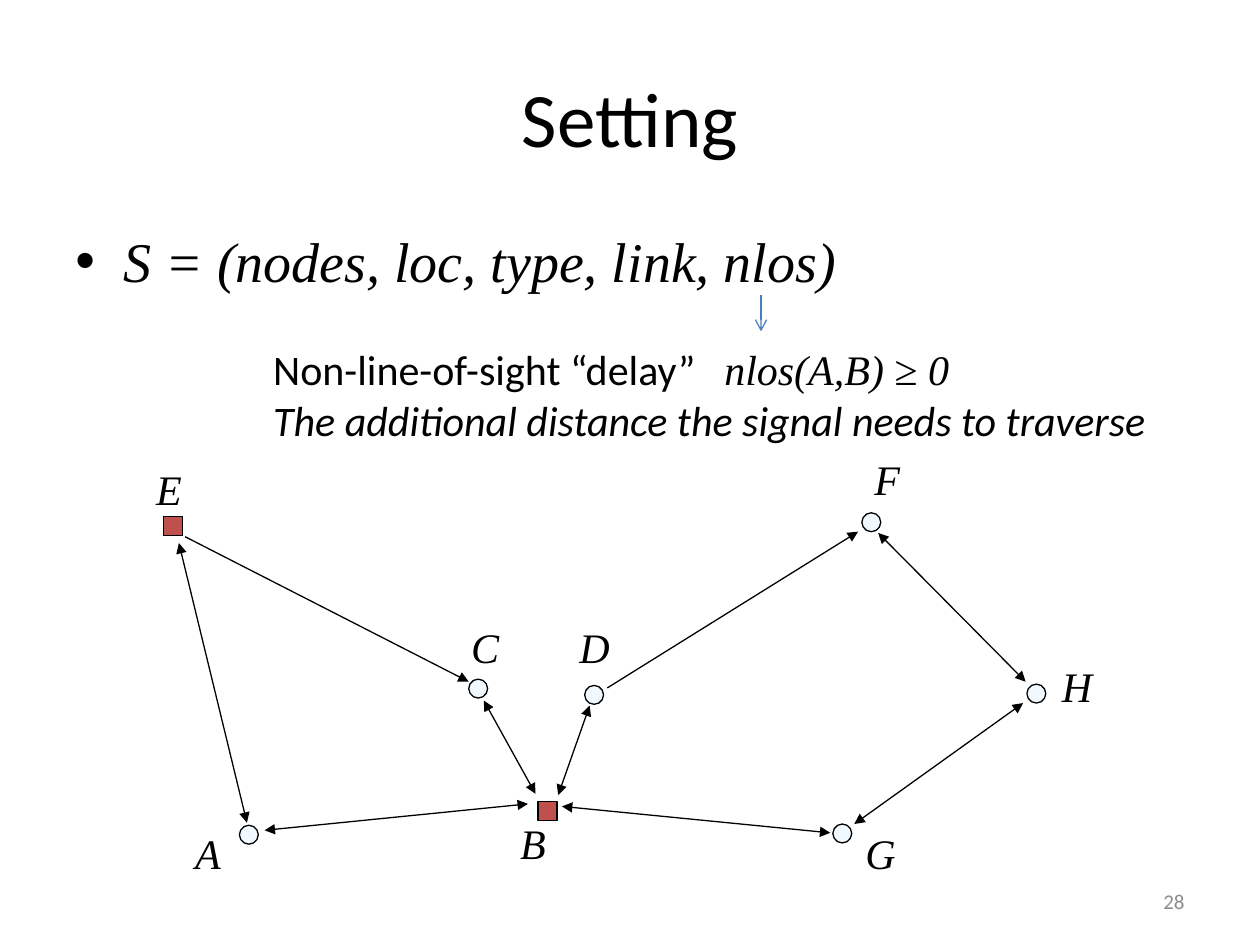
from collections import namedtuple

from lxml import etree
from pptx import Presentation
from pptx import util as u
from pptx.dml.color import RGBColor
from pptx.enum import shapes, text
from pptx.oxml.ns import qn

PX = 9144  # EMU per px, 100 px to the inch
COLORS = {
    "ink": "000000",
    "paper": "FFFFFF",
    "muted": "8C8C8C",
    "anchor": "C0504D",
    "node": "EFF9FF",
    "pointer": "4B7EBC",
}
SERIF = "Times New Roman"
NODE_SIZE = 15
Box = namedtuple("Box", "left top width height")

# name: (node left, node top, label left, label top, is an anchor)
NODES = {
    "A": (90, 305, 45, 302, False),
    "B": (327, 286, 303, 294, True),
    "C": (272, 189, 264, 138, False),
    "D": (364, 194, 350, 138, False),
    "E": (30, 60, 14, 13, True),
    "F": (584, 57, 584, 5, False),
    "G": (561, 304, 577, 302, False),
    "H": (715, 193, 733, 169, False),
}
# (from x, from y, to x, to y, points both ways)
LINKS = [
    (47, 76, 272, 191, False),
    (343, 281, 368, 210, True),
    (325, 280, 284, 206, True),
    (110, 309, 319, 288, True),
    (346, 290, 559, 311, True),
    (382, 196, 581, 72, False),
    (96, 303, 42, 81, True),
    (714, 191, 597, 73, True),
    (578, 304, 712, 208, True),
]


def px(*lengths):
    return [u.Emu(length * PX) for length in lengths]


def rgb(name):
    return RGBColor.from_string(COLORS[name])


def add_span(para, words, size=24, font="Calibri", color="ink", italic=False):
    span = para.add_run()
    span.text = words
    span.font.size = u.Pt(size)
    span.font.name = font
    span.font.italic = italic
    span.font.color.rgb = rgb(color)


def add_text(page, box, words="", align=text.PP_ALIGN.LEFT,
             anchor=text.MSO_ANCHOR.TOP, **span_format):
    """Add a text box and return it; words, if any, fill its first paragraph."""
    shape = page.shapes.add_textbox(*px(*box))
    frame = shape.text_frame
    frame.word_wrap = True
    frame.vertical_anchor = anchor
    para = frame.paragraphs[0]
    para.alignment = align
    if words:
        add_span(para, words, **span_format)
    return shape


def add_line(page, ends, color="ink", head=None, tail=None):
    """Add a straight line; head is the arrowhead at its start, tail at its end."""
    line = page.shapes.add_connector(shapes.MSO_CONNECTOR.STRAIGHT, *px(*ends))
    line.line.color.rgb = rgb(color)
    line.line.width = u.Pt(0.75)
    outline = line.line._get_or_add_ln()
    for tag, kind in (("a:headEnd", head), ("a:tailEnd", tail)):
        if kind:
            etree.SubElement(outline, qn(tag), type=kind)
    etree.SubElement(line._element.spPr, qn("a:effectLst"))


def add_node(page, left, top, is_anchor):
    kind = shapes.MSO_SHAPE.RECTANGLE if is_anchor else shapes.MSO_SHAPE.OVAL
    node = page.shapes.add_shape(kind, *px(left, top, NODE_SIZE, NODE_SIZE))
    node.shadow.inherit = False
    node.fill.solid()
    node.fill.fore_color.rgb = rgb("anchor" if is_anchor else "node")
    node.line.color.rgb = rgb("ink")
    node.line.width = u.Pt(0.75)


def add_bullet(page, box, words):
    shape = add_text(page, box, words, size=32, font=SERIF, italic=True)
    para = shape.text_frame.paragraphs[0]
    para.space_before = u.Pt(6)
    props = para._p.get_or_add_pPr()
    indent = 38 * PX
    props.set("marL", str(indent))
    props.set("indent", str(-indent))
    etree.SubElement(props, qn("a:buFont"), typeface="Arial")
    etree.SubElement(props, qn("a:buChar"), char="•")


def add_explanation(page, box):
    """Add the meaning of nlos, with the formula set at a tab stop."""
    shape = add_text(page, box)
    shape.fill.solid()
    shape.fill.fore_color.rgb = rgb("paper")
    frame = shape.text_frame
    first = frame.paragraphs[0]
    tabs = etree.SubElement(first._p.get_or_add_pPr(), qn("a:tabLst"))
    etree.SubElement(tabs, qn("a:tab"), pos=str(358 * PX), algn="l")
    add_span(first, "Non-line-of-sight “delay”\t")
    add_span(first, "nlos(A,B) ", font=SERIF, italic=True)
    add_span(first, "≥", font=SERIF)
    add_span(first, " 0", font=SERIF, italic=True)
    add_span(frame.add_paragraph(),
             "The additional distance the signal needs to traverse", italic=True)


def add_network(page, box):
    for x1, y1, x2, y2, both_ways in LINKS:
        ends = (box.left + x1, box.top + y1, box.left + x2, box.top + y2)
        add_line(page, ends, head="triangle" if both_ways else None, tail="triangle")
    for name, (left, top, label_left, label_top, is_anchor) in NODES.items():
        add_node(page, box.left + left, box.top + top, is_anchor)
        label = Box(box.left + label_left, box.top + label_top, 65, 75)
        add_text(page, label, name, font=SERIF, italic=True)


def build_setting_slide(deck):
    page = deck.slides.add_slide(deck.slide_layouts[6])
    middle = text.MSO_ANCHOR.MIDDLE
    add_text(page, Box(50, 30, 900, 125), "Setting", size=44,
             align=text.PP_ALIGN.CENTER, anchor=middle)
    add_bullet(page, Box(50, 175, 900, 495), "S = (nodes, loc, type, link, nlos)")
    add_text(page, Box(717, 695, 233, 40), "28", size=12, color="muted",
             align=text.PP_ALIGN.RIGHT, anchor=middle)
    add_network(page, Box(100, 350, 800, 377))
    add_line(page, (604, 234, 604, 263), color="pointer", tail="arrow")
    add_explanation(page, Box(207, 268, 720, 91))


def main():
    deck = Presentation()
    deck.slide_width, deck.slide_height = px(1000, 750)
    build_setting_slide(deck)
    deck.save("out.pptx")


if __name__ == "__main__":
    main()
